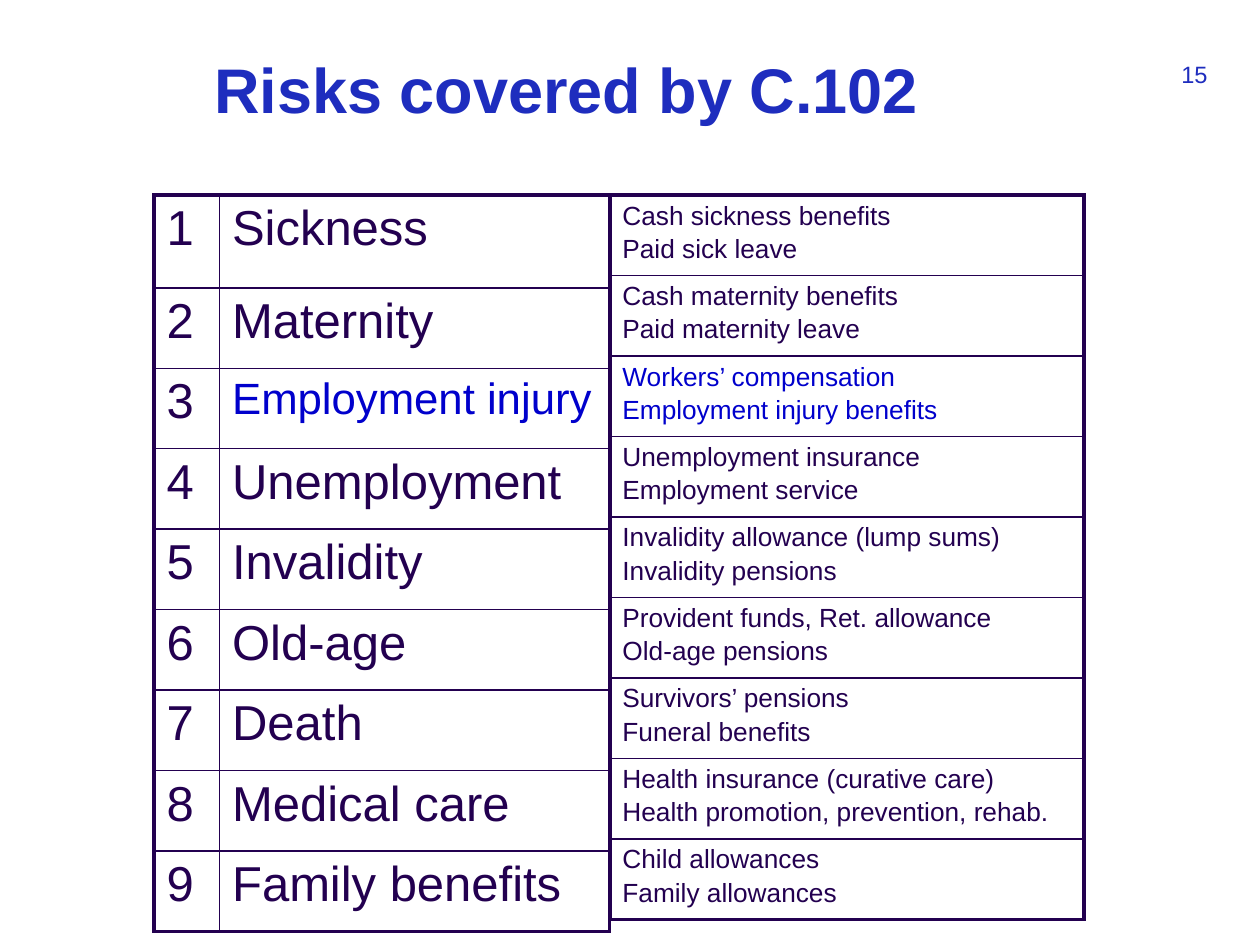
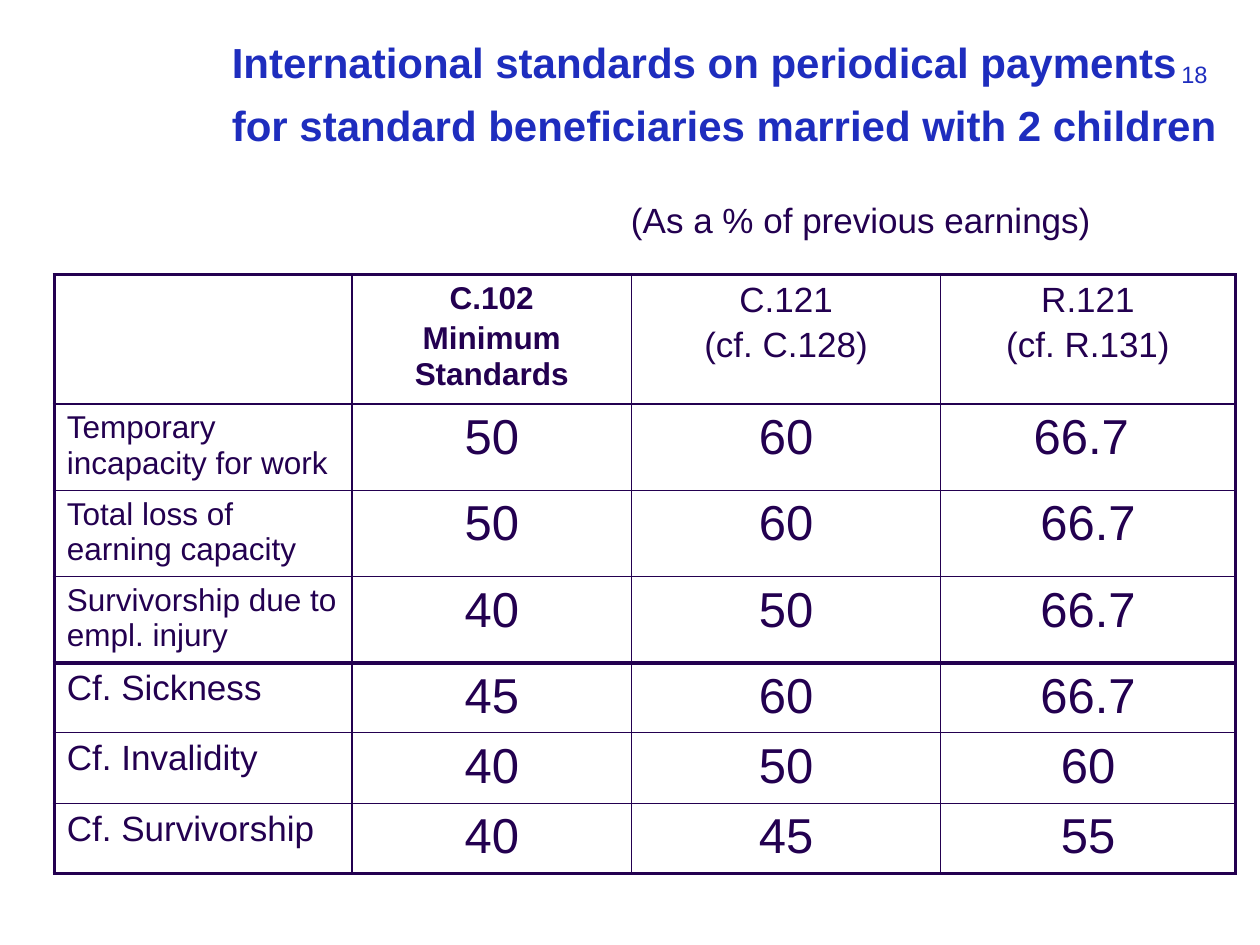
from dataclasses import dataclass

from lxml import etree
from pptx import Presentation
from pptx import util as u
from pptx.dml.color import RGBColor
from pptx.enum import text
from pptx.oxml.ns import qn


@dataclass(frozen=True)
class Theme:
    """Colours, type sizes and line widths shared by the slides."""
    font: str = "Arial"
    heading: str = "1E2DBE"
    ink: str = "230050"
    accent: str = "0000CC"
    title: float = 36
    long_title: float = 24
    number: float = 13.5
    figure: float = 28
    narrow: float = 25
    label: float = 20
    small_label: float = 18
    benefit: float = 15
    thin: float = 1
    thick: float = 2.25
    gap: float = 0.16


@dataclass(frozen=True)
class Entry:
    """Content and style of one table cell."""
    words: str
    size: float
    color: str = Theme.ink
    bold: bool = False
    centred: bool = False


THEME = Theme()
SLIDE_SIZE = (720, 540)
NUMBER_BOX = (659, 34, 31, 22)

RISKS = [
    ("Sickness", "Cash sickness benefits\nPaid sick leave"),
    ("Maternity", "Cash maternity benefits\nPaid maternity leave"),
    ("Employment injury", "Workers’ compensation\nEmployment injury benefits"),
    ("Unemployment", "Unemployment insurance\nEmployment service"),
    ("Invalidity", "Invalidity allowance (lump sums)\nInvalidity pensions"),
    ("Old-age", "Provident funds, Ret. allowance\nOld-age pensions"),
    ("Death", "Survivors’ pensions\nFuneral benefits"),
    ("Medical care", "Health insurance (curative care)\nHealth promotion, prevention, rehab."),
    ("Family benefits", "Child allowances\nFamily allowances"),
]
HIGHLIGHTED_RISK = "Employment injury"

STANDARDS = ["C.102\nMinimum Standards", "C.121\n(cf. C.128)", "R.121\n(cf. R.131)"]
PAYMENTS = [
    ("Temporary incapacity for work", "50", "60", "66.7 "),
    ("Total loss of earning capacity", "50", "60", "66.7"),
    ("Survivorship due to empl. injury", "40", "50", "66.7"),
    ("Cf. Sickness", "45", "60", "66.7"),
    ("Cf. Invalidity", "40", "50", "60"),
    ("Cf. Survivorship", "40", "45", "55"),
]
INJURY_ROWS = 3


def style_run(run, size, color, bold=False):
    """Apply the theme font with the given size, colour and weight."""
    run.font.name = THEME.font
    run.font.size = u.Pt(size)
    run.font.bold = bold
    run.font.color.rgb = RGBColor.from_string(color)


def add_line(slide, box, words, size, color, bold=False, align=text.PP_ALIGN.LEFT, spacing=0.9):
    """Write one paragraph in a box without insets and return it."""
    frame = slide.shapes.add_textbox(*map(u.Pt, box)).text_frame
    frame.word_wrap = True
    frame.margin_left = frame.margin_right = frame.margin_top = frame.margin_bottom = 0
    frame.text = words
    paragraph = frame.paragraphs[0]
    paragraph.alignment = align
    paragraph.line_spacing = spacing
    style_run(paragraph.runs[0], size, color, bold)
    return paragraph


def add_heading(slide, box, words, size, number):
    """Write the slide title and the page number, and return the title."""
    title = add_line(slide, box, words, size, THEME.heading, True)
    add_line(slide, NUMBER_BOX, number, THEME.number, THEME.heading,
             align=text.PP_ALIGN.RIGHT, spacing=1.0)
    return title


def set_borders(cell, widths):
    """Draw the left, right, top and bottom borders of a cell."""
    properties = cell._tc.get_or_add_tcPr()
    for side, width in zip("LRTB", widths):
        line = etree.SubElement(properties, qn(f"a:ln{side}"), w=str(u.Pt(width)))
        fill = etree.SubElement(line, qn("a:solidFill"))
        etree.SubElement(fill, qn("a:srgbClr"), val=THEME.ink)


def fill_cell(cell, entry):
    """Write an entry into a cell, with a gap between its paragraphs."""
    cell.margin_bottom = u.Pt(2.5)
    cell.text_frame.text = entry.words
    for index, paragraph in enumerate(cell.text_frame.paragraphs):
        paragraph.alignment = text.PP_ALIGN.CENTER if entry.centred else text.PP_ALIGN.LEFT
        if index:
            paragraph.space_before = u.Pt(round(entry.size * THEME.gap, 1))
        for run in paragraph.runs:
            style_run(run, entry.size, entry.color, entry.bold)


def add_grid(slide, origin, widths, heights, entries, divider=None):
    """Draw a ruled table with a thick frame and an optional thick divider."""
    box = (*origin, sum(widths), sum(heights))
    grid = slide.shapes.add_table(len(heights), len(widths), *map(u.Pt, box)).table
    grid.first_row = grid.horz_banding = False
    for column, width in zip(grid.columns, widths):
        column.width = u.Pt(width)
    for row, height in zip(grid.rows, heights):
        row.height = u.Pt(height)
    thick_rows = {0, len(heights), divider}
    thick_columns = {0, len(widths)}
    for r, line in enumerate(entries):
        for c, entry in enumerate(line):
            cell = grid.cell(r, c)
            edges = [c in thick_columns, c + 1 in thick_columns,
                     r in thick_rows, r + 1 in thick_rows]
            set_borders(cell, [THEME.thick if edge else THEME.thin for edge in edges])
            cell.fill.background()
            fill_cell(cell, entry)


def risk_tables(slide, origin):
    """Place the numbered risks beside the benefits that cover them."""
    left, top = origin
    widths = (37.5, 223)
    row = 46
    risks, benefits = [], []
    for number, (risk, benefit) in enumerate(RISKS, 1):
        marked = risk == HIGHLIGHTED_RISK
        color = THEME.accent if marked else THEME.ink
        size = THEME.narrow if marked else THEME.figure
        risks.append([Entry(str(number), THEME.figure), Entry(risk, size, color)])
        benefits.append([Entry(benefit, THEME.benefit, color)])
    add_grid(slide, origin, widths, [row + 7] + [row] * (len(RISKS) - 1), risks)
    add_grid(slide, (left + sum(widths), top), [271], [row] * len(RISKS), benefits)


def payment_table(slide, origin):
    """Place the payment rates by standard below their unit."""
    left, top = origin
    add_line(slide, (left + 251, top - 41, 420, 28), "(As a % of previous earnings)",
             THEME.label, THEME.ink, align=text.PP_ALIGN.CENTER)
    minimum, *others = STANDARDS
    entries = [[Entry("", THEME.label),
                Entry(minimum, THEME.small_label, bold=True, centred=True),
                *(Entry(name, THEME.label, centred=True) for name in others)]]
    for index, (case, *rates) in enumerate(PAYMENTS):
        size = THEME.small_label if index < INJURY_ROWS else THEME.label
        entries.append([Entry(case, size),
                        *(Entry(rate, THEME.figure, centred=True) for rate in rates)])
    add_grid(slide, origin, (170, 160, 176.5, 168.5), (71.5, 49, 47.5, 47.5, 39, 40.5, 40),
             entries, divider=INJURY_ROWS + 1)


def risks_slide(slide):
    """Build the slide on the risks covered."""
    add_heading(slide, (122.5, 34, 590, 85), "Risks covered by C.102", THEME.title, "15")
    risk_tables(slide, (88, 111.5))


def payments_slide(slide):
    """Build the slide on periodical payments."""
    words = ("International standards on periodical payments "
             "for standard beneficiaries married with 2 children")
    title = add_heading(slide, (132.5, 24, 570, 90), words, THEME.long_title, "18")
    closing = title.add_run()
    closing.text = " "
    style_run(closing, THEME.title, THEME.heading, True)
    payment_table(slide, (31, 157))


def main():
    """Build and save the presentation."""
    deck = Presentation()
    deck.slide_width, deck.slide_height = map(u.Pt, SLIDE_SIZE)
    for build in (risks_slide, payments_slide):
        build(deck.slides.add_slide(deck.slide_layouts[6]))
    deck.save("out.pptx")


if __name__ == "__main__":
    main()
